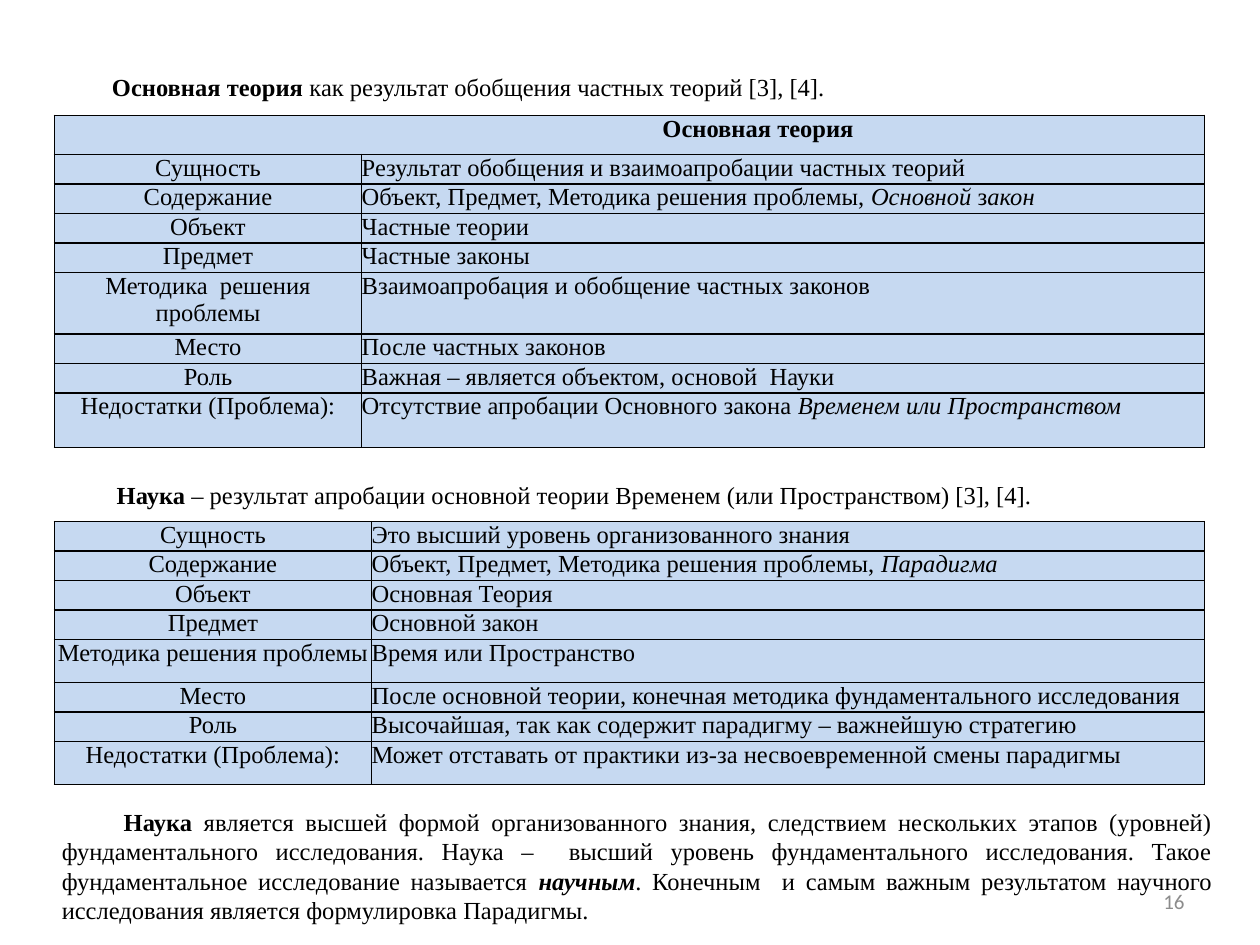
from dataclasses import dataclass

import pptx
import pptx.dml.color
import pptx.enum.text
import pptx.oxml
import pptx.oxml.ns
import pptx.util

Pt = pptx.util.Pt
RGB = pptx.dml.color.RGBColor.from_string
ALIGN = pptx.enum.text.PP_ALIGN
ANCHOR = pptx.enum.text.MSO_ANCHOR


@dataclass(frozen=True)
class Theme:
    font: str = "Times New Roman"
    number_font: str = "Calibri"
    ink: str = "000000"
    muted: str = "8C8C8C"
    cell: str = "C6D9F1"
    body: float = 14
    number: float = 12
    border: float = 1


T = Theme()


def fill_paragraph(p, parts, align, font=T.font, size=T.body, color=T.ink):
    """Each part is plain text or (text, style), style holding b and/or i."""
    p.alignment = align
    for part in parts:
        text, style = (part, "") if isinstance(part, str) else part
        r = p.add_run()
        r.text = text
        r.font.name, r.font.size = font, Pt(size)
        r.font.color.rgb = RGB(color)
        r.font.bold, r.font.italic = "b" in style, "i" in style


def add_text(s, box, parts, align, indent=0, anchor=ANCHOR.MIDDLE, **look):
    sp = s.shapes.add_textbox(*map(Pt, box))
    tf = sp.text_frame
    tf.word_wrap = True
    tf.vertical_anchor = anchor
    p = tf.paragraphs[0]
    fill_paragraph(p, parts, align, **look)
    if indent:
        pPr = p._p.get_or_add_pPr()
        pPr.set("marL", "0")
        pPr.set("indent", str(Pt(indent)))


def style_cell(cell):
    tcPr = cell._tc.get_or_add_tcPr()
    for side in "LRTB":
        tcPr.append(pptx.oxml.parse_xml(
            f'<a:ln{side} {pptx.oxml.ns.nsdecls("a")} w="{Pt(T.border)}">'
            f'<a:solidFill><a:srgbClr val="{T.ink}"/></a:solidFill></a:ln{side}>'))
    cell.fill.solid()
    cell.fill.fore_color.rgb = RGB(T.cell)
    cell.margin_left = cell.margin_right = 0
    cell.margin_top = cell.margin_bottom = 0


def add_property_table(s, left, top, widths, heights, rows, header=None):
    """Labels on the left, descriptions on the right, optional header across."""
    first = 1 if header else 0
    tbl = s.shapes.add_table(len(heights), 2, Pt(left), Pt(top),
                             Pt(sum(widths)), Pt(sum(heights))).table
    tbl.first_row = tbl.horz_banding = False
    for col, width in zip(tbl.columns, widths):
        col.width = Pt(width)
    for row, height in zip(tbl.rows, heights):
        row.height = Pt(height)
        for cell in row.cells:
            style_cell(cell)
    if header:
        cell = tbl.cell(0, 0)
        cell.merge(tbl.cell(0, 1))
        cell.margin_left, cell.margin_right = Pt(152), Pt(5)
        fill_paragraph(cell.text_frame.paragraphs[0], [(header, "b")], ALIGN.CENTER)
    for i, (label, parts) in enumerate(rows, first):
        fill_paragraph(tbl.cell(i, 0).text_frame.paragraphs[0], [label], ALIGN.CENTER)
        fill_paragraph(tbl.cell(i, 1).text_frame.paragraphs[0], parts, ALIGN.JUSTIFY)


THEORY = [
    ("Сущность", ["Результат обобщения и взаимоапробации частных теорий"]),
    ("Содержание", ["Объект, Предмет, Методика решения проблемы, ",
                    ("Основной", "i"), " з", ("акон", "i")]),
    ("Объект", ["Частные теории"]),
    ("Предмет", ["Частные законы"]),
    ("Методика  решения проблемы", ["Взаимоапробация и обобщение частных законов"]),
    ("Место", ["После частных законов"]),
    ("Роль", ["Важная – является объектом, основой  Науки"]),
    ("Недостатки (Проблема):", ["Отсутствие апробации Основного закона ",
                                ("Временем или Пространством", "i")]),
]
SCIENCE = [
    ("Сущность", ["Это высший уровень организованного знания"]),
    ("Содержание", ["Объект, Предмет, Методика решения проблемы, ", ("Парадигма", "i")]),
    ("Объект", ["Основная Теория"]),
    ("Предмет", ["Основной закон"]),
    ("Методика решения проблемы", ["Время или Пространство"]),
    ("Место", ["После основной теории, конечная методика фундаментального исследования"]),
    ("Роль", ["Высочайшая, так как содержит парадигму – важнейшую стратегию"]),
    ("Недостатки (Проблема):",
     ["Может отставать от практики из-за несвоевременной смены парадигмы"]),
]


def main():
    prs = pptx.Presentation()
    prs.slide_width, prs.slide_height = Pt(720), Pt(540)
    s = prs.slides.add_slide(prs.slide_layouts[6])
    line = 16.8

    # Main theory: heading and table
    add_text(s, (14.4, 37.5, 472, 46),
             [("Основная теория", "b"), " как результат обобщения частных теорий [3], [4]."],
             ALIGN.LEFT, indent=42.5, anchor=ANCHOR.TOP)
    add_property_table(s, 31, 66, (175.7, 481.7),
                       [22.3] + [line] * 4 + [35.3] + [line] * 2 + [31],
                       THEORY, header="Основная теория")

    # Science: heading and table
    add_text(s, (59.6, 270.3, 545, 24.3),
             [("Наука", "b"), " – результат апробации основной теории Временем "
              "(или Пространством) [3], [4]."], ALIGN.JUSTIFY)
    add_property_table(s, 31, 298, (181.4, 476),
                       [line] * 4 + [24.6] + [line] * 2 + [24.6], SCIENCE)

    # Conclusion and slide number
    add_text(s, (28.2, 457.5, 671.6, 74.6),
             [("Наука", "b"),
              " является высшей формой организованного знания, следствием нескольких "
              "этапов (уровней) фундаментального исследования. Наука –  высший уровень "
              "фундаментального исследования. Такое фундаментальное исследование называется ",
              ("научным", "bi"),
              ". Конечным  и самым важным результатом научного исследования является "
              "формулировка Парадигмы."], ALIGN.JUSTIFY, indent=35.4)
    add_text(s, (516, 500.5, 168, 28.8), ["16"], ALIGN.RIGHT,
             font=T.number_font, size=T.number, color=T.muted)

    prs.save("out.pptx")


if __name__ == "__main__":
    main()
